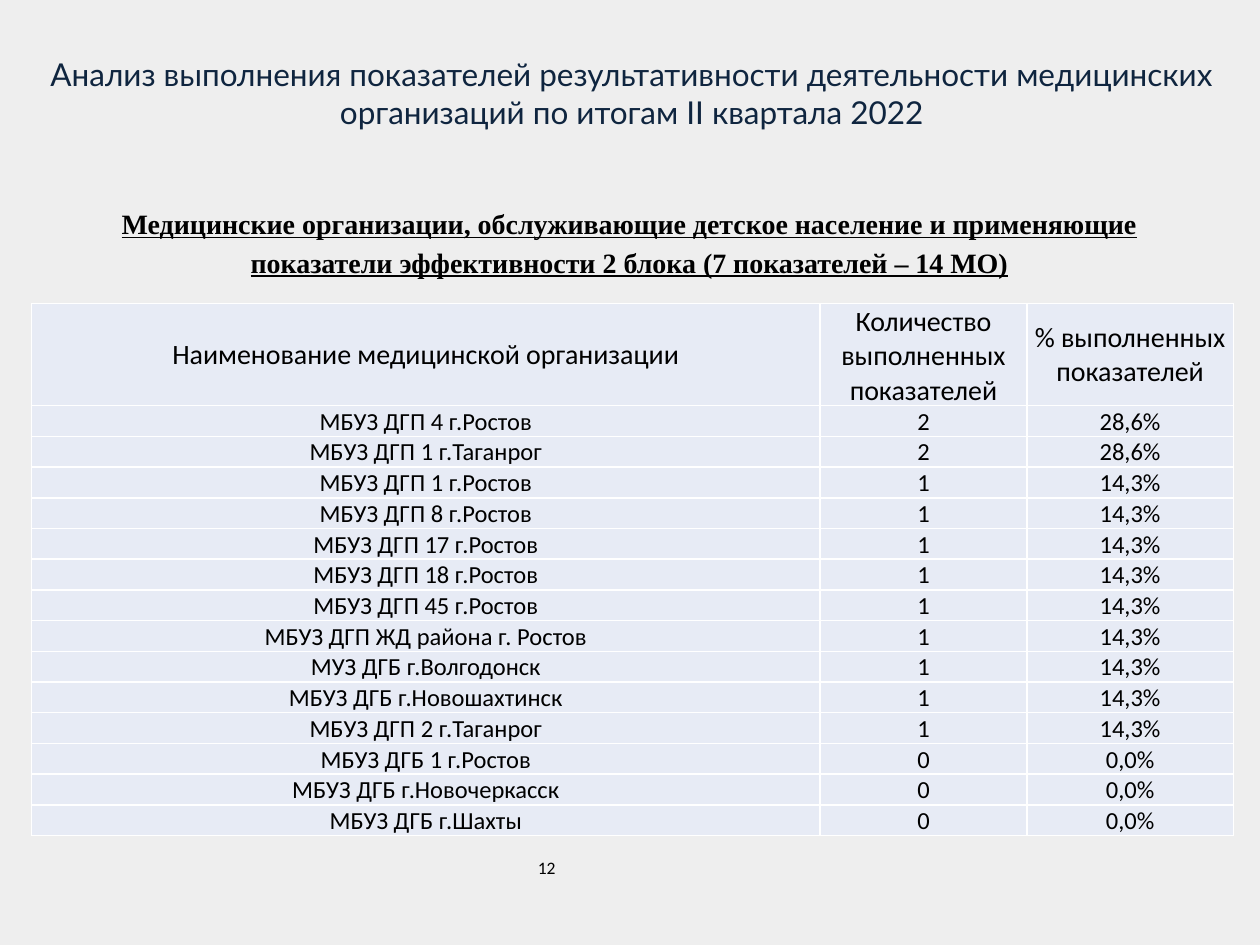
from dataclasses import dataclass

from pptx import Presentation
from pptx.dml.color import RGBColor
from pptx.enum.text import MSO_ANCHOR, PP_ALIGN
from pptx.oxml import parse_xml
from pptx.oxml.ns import nsdecls
from pptx.util import Inches, Pt

LEFT, CENTER = PP_ALIGN.LEFT, PP_ALIGN.CENTER
MIDDLE = MSO_ANCHOR.MIDDLE
BLACK, WHITE, NAVY = "000000", "FFFFFF", "0F253F"
BACK, PALE = "EEEEEE", "E7EBF5"
TOTAL = 7


@dataclass
class Style:
    font: str
    size: float
    color: str = BLACK
    bold: bool = False
    under: bool = False
    align: PP_ALIGN = CENTER


@dataclass
class Label:
    text: str
    left: float
    top: float
    width: float
    height: float
    style: Style


@dataclass
class Clinic:
    name: str
    done: int

    def cells(self) -> list[str]:
        share = f"{self.done / TOTAL:.1%}".replace(".", ",")
        return [self.name, str(self.done), share]


HEAD = Style("Calibri", 16)
BODY = Style("Calibri", 14)
LABELS = [
    Label("12", 4.17, 6.75, 2, 0.4, Style("Calibri", 10, align=LEFT)),
    Label("Анализ выполнения показателей результативности деятельности "
          "медицинских организаций по итогам II квартала 2022",
          0, 0.39, 10.03, 0.71, Style("Lato", 18, NAVY)),
]
GROUP = Label("Медицинские организации, обслуживающие детское население и "
              "применяющие показатели эффективности 2 блока "
              "(7 показателей – 14 МО)", 0.35, 1.55, 9.29, 0.72,
              Style("Times New Roman", 16, bold=True, under=True))
TITLES = ["Наименование медицинской организации",
          "Количество выполненных показателей",
          "% выполненных показателей"]
CLINICS = [
    Clinic("МБУЗ ДГП 4 г.Ростов", 2),
    Clinic("МБУЗ ДГП 1 г.Таганрог", 2),
    Clinic("МБУЗ ДГП 1 г.Ростов", 1),
    Clinic("МБУЗ ДГП 8 г.Ростов", 1),
    Clinic("МБУЗ ДГП 17 г.Ростов", 1),
    Clinic("МБУЗ ДГП 18 г.Ростов", 1),
    Clinic("МБУЗ ДГП 45 г.Ростов", 1),
    Clinic("МБУЗ ДГП ЖД района г. Ростов", 1),
    Clinic("МУЗ ДГБ г.Волгодонск", 1),
    Clinic("МБУЗ ДГБ г.Новошахтинск", 1),
    Clinic("МБУЗ ДГП 2 г.Таганрог", 1),
    Clinic("МБУЗ ДГБ 1 г.Ростов", 0),
    Clinic("МБУЗ ДГБ г.Новочеркасск", 0),
    Clinic("МБУЗ ДГБ г.Шахты", 0),
]
WIDTHS = [6.26, 1.64, 1.64]
HEAD_H, ROW_H = 0.8, 0.24


def paint(fill, color: str) -> None:
    fill.solid()
    fill.fore_color.rgb = RGBColor.from_string(color)


def write(frame, text: str, style: Style):
    frame.text = text
    para = frame.paragraphs[0]
    para.alignment = style.align
    font = para.runs[0].font
    font.name, font.size = style.font, Pt(style.size)
    font.bold, font.underline = style.bold, style.under
    font.color.rgb = RGBColor.from_string(style.color)
    return para


def add_label(slide, label: Label):
    box = slide.shapes.add_textbox(Inches(label.left), Inches(label.top),
                                   Inches(label.width), Inches(label.height))
    box.text_frame.word_wrap = True
    return write(box.text_frame, label.text, label.style)


def add_edges(cell) -> None:
    props = cell._tc.get_or_add_tcPr()
    for index, side in enumerate(("lnL", "lnR", "lnT", "lnB")):
        props.insert(index, parse_xml(
            f'<a:{side} {nsdecls("a")} w="{Pt(1)}"><a:solidFill>'
            f'<a:srgbClr val="{WHITE}"/></a:solidFill></a:{side}>'))


def fill_cell(cell, text: str, style: Style) -> None:
    cell.margin_left = cell.margin_right = cell.margin_top = Inches(0.01)
    cell.margin_bottom = Inches(0)
    cell.vertical_anchor = MIDDLE
    paint(cell.fill, PALE)
    add_edges(cell)
    write(cell.text_frame, text, style)


def add_grid(slide) -> None:
    rows = [TITLES] + [clinic.cells() for clinic in CLINICS]
    height = HEAD_H + ROW_H * len(CLINICS)
    grid = slide.shapes.add_table(
        len(rows), len(WIDTHS), Inches(0.25), Inches(2.41),
        Inches(sum(WIDTHS)), Inches(height)).table
    grid.horz_banding = False
    for col, width in zip(grid.columns, WIDTHS):
        col.width = Inches(width)
    for r, texts in enumerate(rows):
        grid.rows[r].height = Inches(ROW_H if r else HEAD_H)
        for c, text in enumerate(texts):
            fill_cell(grid.cell(r, c), text, BODY if r else HEAD)


def main() -> None:
    deck = Presentation()
    deck.slide_width, deck.slide_height = Inches(10), Inches(7.5)
    slide = deck.slides.add_slide(deck.slide_layouts[6])
    paint(slide.background.fill, BACK)
    for label in LABELS:
        add_label(slide, label)
    para = add_label(slide, GROUP)
    para.line_spacing = 1.15
    para.space_after = Pt(10)
    add_grid(slide)
    deck.save("out.pptx")


if __name__ == "__main__":
    main()
